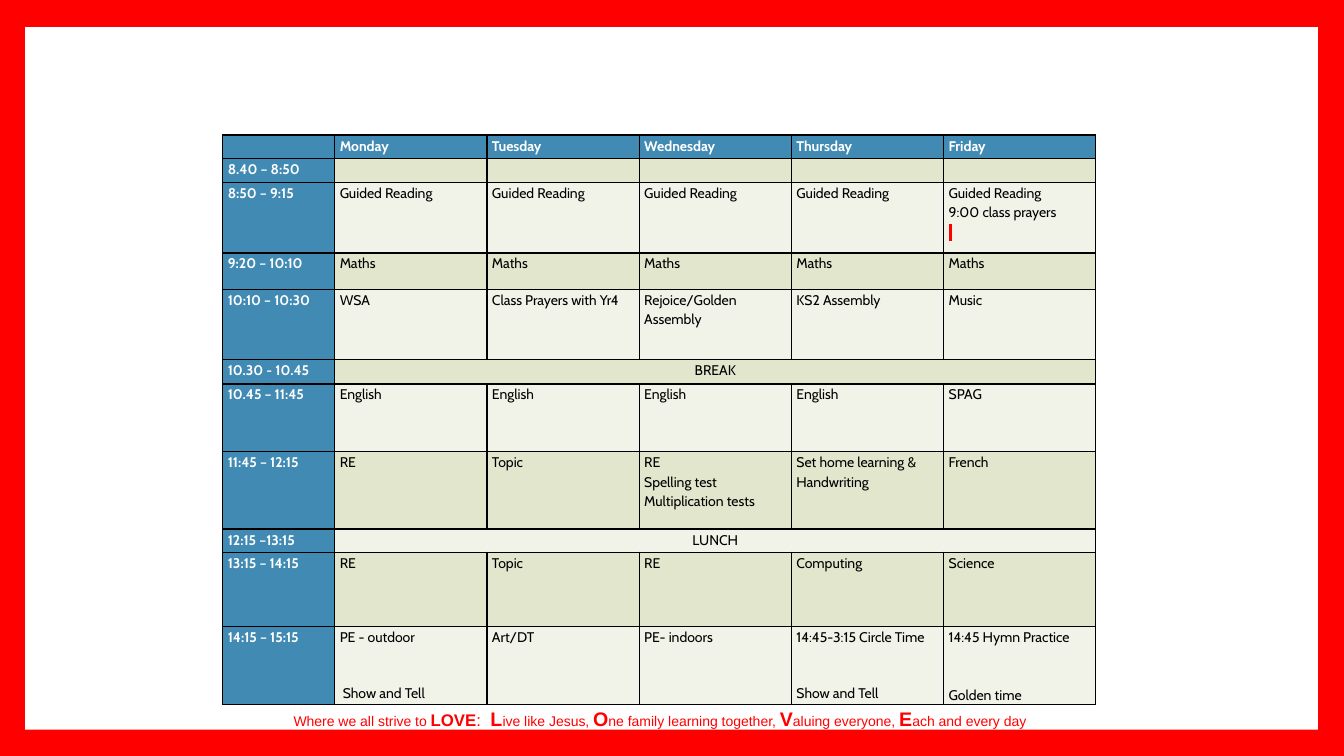
from pptx import Presentation
from pptx.dml.color import RGBColor
from pptx.enum.shapes import MSO_SHAPE
from pptx.enum.text import MSO_ANCHOR, PP_ALIGN
from pptx.oxml.ns import qn
from pptx.util import Inches, Pt
from lxml.etree import SubElement

COLORS = {"red": "FF0000", "white": "FFFFFF", "black": "000000",
          "blue": "418AB3", "green": "E1E6CD", "pale": "F1F3E8"}
DAYS = ["Monday", "Tuesday", "Wednesday", "Thursday", "Friday"]
CURSOR = chr(160)  # highlighted non-breaking space

# Each row: time, height, entries (one entry spans the whole week)
ROWS = [
    ("", 0.23, DAYS),
    ("8.40 – 8:50", 0.24, [""] * 5),
    ("8:50 – 9:15", 0.70, ["Guided Reading"] * 4
     + ["Guided Reading\n9:00 class prayers\n" + CURSOR]),
    ("9:20 – 10:10", 0.36, ["Maths"] * 5),
    ("10:10 – 10:30", 0.70, ["WSA", "Class Prayers with Yr4",
                             "Rejoice/Golden Assembly", "KS2 Assembly", "Music"]),
    ("10.30 - 10.45", 0.24, ["BREAK"]),
    ("10.45 – 11:45", 0.67, ["English"] * 4 + ["SPAG"]),
    ("11:45 – 12:15", 0.77, ["RE", "Topic",
                             "RE\nSpelling test\nMultiplication tests",
                             "Set home learning & Handwriting", "French"]),
    ("12:15 –13:15", 0.23, ["LUNCH"]),
    ("13:15 – 14:15", 0.74, ["RE", "Topic", "RE", "Computing", "Science"]),
    ("14:15 – 15:15", 0.77, ["PE - outdoor\n Show and Tell", "Art/DT", "PE- indoors",
                             "14:45-3:15 Circle Time\nShow and Tell",
                             "14:45 Hymn Practice\nGolden time"]),
]
# Space before the closing activities of the day, in points
GAPS = {" Show and Tell": 25.5, "Show and Tell": 25.5, "Golden time": 27.5}

# Motto as (text, size, bold)
MOTTO = [("Where we all strive to ", 10, False), ("LOVE", 12, True), (":  ", 12, False),
         ("L", 14, True), ("ive like Jesus, ", 10, False),
         ("O", 14, True), ("ne family learning together, ", 10, False),
         ("V", 14, True), ("aluing everyone, ", 10, False),
         ("E", 14, True), ("ach and every day", 10, False)]


def rgb(name):
    return RGBColor.from_string(COLORS[name])


def add_solid(parent, name):
    fill = SubElement(parent, qn("a:solidFill"))
    SubElement(fill, qn("a:srgbClr"), val=COLORS[name])


def add_borders(cell):
    tcPr = cell._tc.get_or_add_tcPr()
    for side in ("a:lnL", "a:lnR", "a:lnT", "a:lnB"):
        add_solid(SubElement(tcPr, qn(side), w=str(Pt(1))), "black")


def fill_cell(cell, text, fill, heading=False, centred=False):
    cell.margin_left = cell.margin_right = Inches(0.05)
    cell.margin_top = cell.margin_bottom = 0
    add_borders(cell)
    cell.fill.solid()
    cell.fill.fore_color.rgb = rgb(fill)
    tf = cell.text_frame
    for i, line in enumerate(text.split("\n")):
        p = tf.paragraphs[0] if i == 0 else tf.add_paragraph()
        p.line_spacing = 1.15
        if centred:
            p.alignment = PP_ALIGN.CENTER
        if line in GAPS:
            p.space_before = Pt(GAPS[line])
        p.font.name = "Cabin"
        p.font.size = Pt(10)
        p.font.bold = heading
        p.font.color.rgb = rgb("white" if heading else "black")
        if not line:
            SubElement(p._p, qn("a:endParaRPr"), sz="1000")
            continue
        r = p.add_run()
        r.text = line
        if line == CURSOR:
            mark = SubElement(r._r.get_or_add_rPr(), qn("a:highlight"))
            SubElement(mark, qn("a:srgbClr"), val=COLORS["red"])


def add_frame(s, left, top, width, height):
    s.background.fill.solid()
    s.background.fill.fore_color.rgb = rgb("red")
    sp = s.shapes.add_shape(MSO_SHAPE.RECTANGLE, Inches(left), Inches(top),
                            Inches(width), Inches(height))
    sp.shadow.inherit = False
    sp.fill.solid()
    sp.fill.fore_color.rgb = rgb("white")
    sp.line.fill.background()


def add_timetable(s, left, top, time_width, day_width):
    width = time_width + day_width * len(DAYS)
    height = sum(row[1] for row in ROWS)
    table = s.shapes.add_table(len(ROWS), len(DAYS) + 1, Inches(left), Inches(top),
                               Inches(width), Inches(height)).table
    table.first_row = table.horz_banding = False
    for c, column in enumerate(table.columns):
        column.width = Inches(day_width if c else time_width)
    for i, (time, row_height, entries) in enumerate(ROWS):
        table.rows[i].height = Inches(row_height)
        fill_cell(table.cell(i, 0), time, "blue", heading=True)
        spans_week = len(entries) == 1
        if spans_week:
            table.cell(i, 1).merge(table.cell(i, len(DAYS)))
            entries = entries + [""] * (len(DAYS) - 1)
        band = "blue" if i == 0 else "green" if i % 2 else "pale"
        for c, entry in enumerate(entries, 1):
            fill_cell(table.cell(i, c), entry, band, heading=i == 0, centred=spans_week)


def add_motto(s, left, top, width, height):
    tf = s.shapes.add_textbox(Inches(left), Inches(top),
                              Inches(width), Inches(height)).text_frame
    tf.word_wrap = True
    tf.vertical_anchor = MSO_ANCHOR.MIDDLE
    p = tf.paragraphs[0]
    p.alignment = PP_ALIGN.CENTER
    p.font.name = "Arial"
    p.font.color.rgb = rgb("red")
    for text, size, bold in MOTTO:
        r = p.add_run()
        r.text = text
        r.font.size = Pt(size)
        r.font.bold = bold


def main():
    prs = Presentation()
    prs.slide_width, prs.slide_height = Inches(13.33), Inches(7.5)
    s = prs.slides.add_slide(prs.slide_layouts[6])
    add_frame(s, 0.25, 0.27, 12.82, 6.97)
    add_motto(s, 1.43, 6.93, 10.23, 0.4)
    add_timetable(s, 2.21, 1.34, 1.11, 1.51)
    prs.save("out.pptx")


if __name__ == "__main__":
    main()
